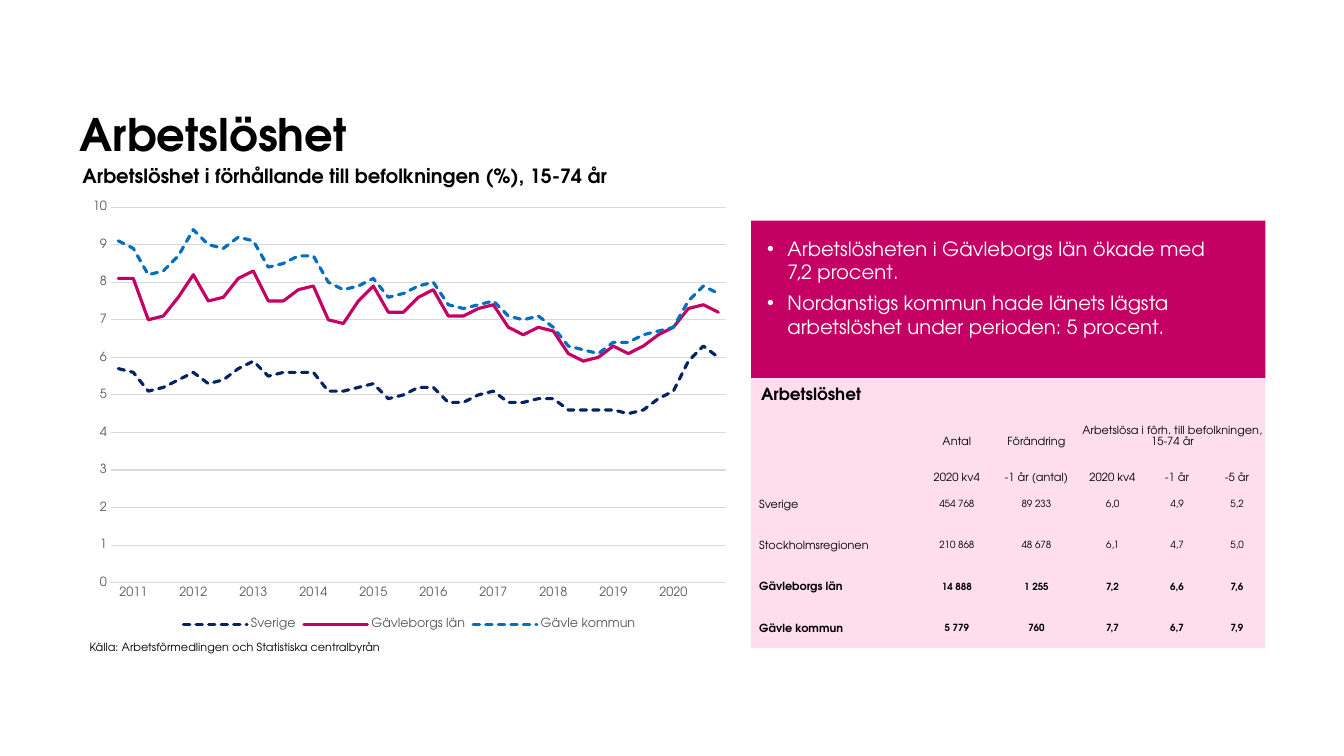
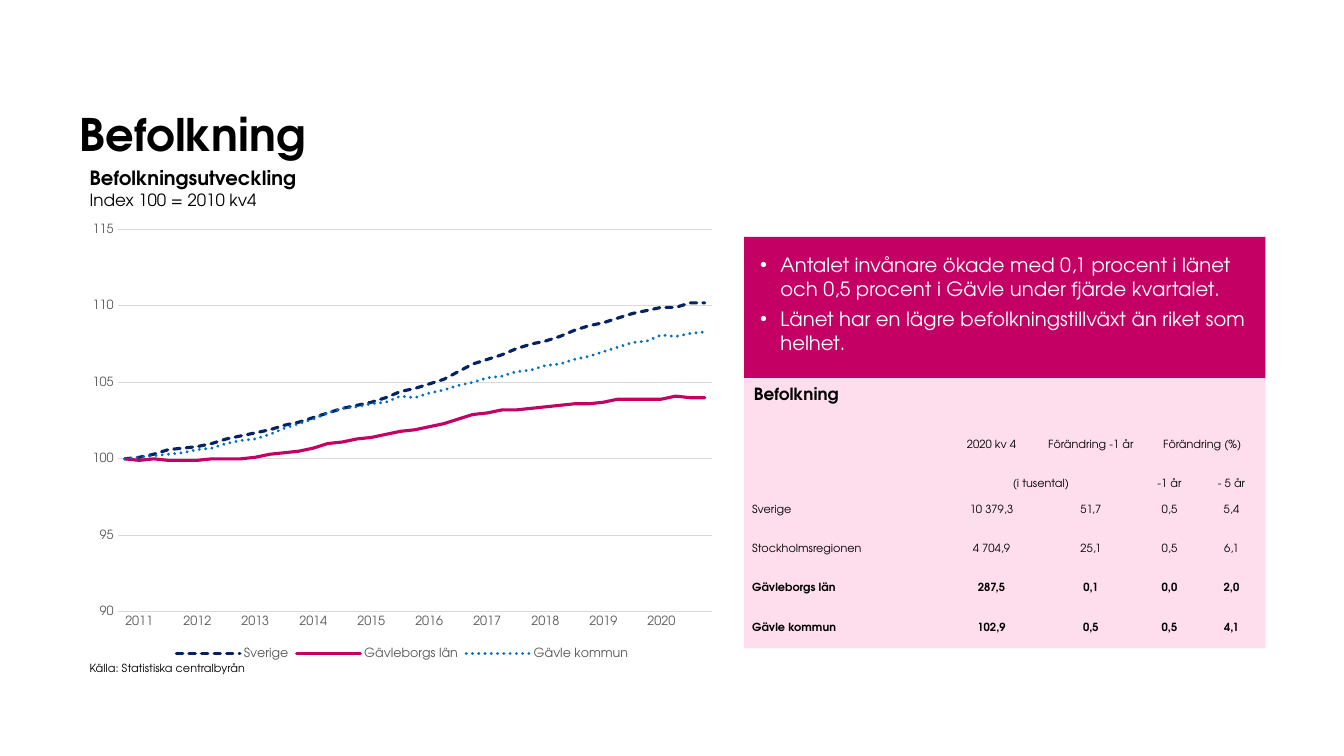
from lxml.etree import SubElement as Sub
from pptx import Presentation
from pptx.chart.data import CategoryChartData as Data
from pptx.dml.color import RGBColor as RGB
from pptx.enum.chart import XL_CHART_TYPE as Kind, XL_LEGEND_POSITION as Place
from pptx.enum.chart import XL_MARKER_STYLE as Mark, XL_TICK_MARK as Tick
from pptx.enum.dml import MSO_LINE as Dash
from pptx.enum.shapes import MSO_SHAPE as Form
from pptx.enum.text import MSO_ANCHOR as Anchor, PP_ALIGN as Align
from pptx.oxml.ns import qn
from pptx.util import Inches, Pt

# Shared look
FONT = "TeX Gyre Adventor"
BLACK, WHITE, GREY, RULE = "000000", "FFFFFF", "595959", "D9D9D9"
PINK, PALE, NAVY, BLUE = "C40064", "FEDEED", "052364", "006EBF"
LEFT, RIGHT, SPLIT, FLOOR = 0.79, 12.55, 3.75, 6.43
NO_GRID = "{2D5ABB26-0587-4C30-8999-92F81FD0307C}"
YEARS = [str(2011 + i // 4) if i % 4 == 1 else "" for i in range(41)]
AREAS = ["Sverige", "Gävleborgs län", "Gävle kommun"]

# Slide content
JOBS = {
    "title": "Arbetslöshet",
    "head": [("Arbetslöshet i förhållande till befolkningen (%), 15-74 år", 14, True)],
    "head_at": (0.72, 1.58, 5.7, 0.34),
    "source": "Källa: Arbetsförmedlingen och Statistiska centralbyrån",
    "source_at": (LEFT, 6.3, 3.13, 0.24),
    "panel": (7.45, 2.19),
    "points": ["Arbetslösheten i Gävleborgs län ökade med\n7,2 procent.",
               "Nordanstigs kommun hade länets lägsta arbetslöshet "
               "under perioden: 5 procent."],
    "cols": [1.67, 0.74, 0.84, 0.67, 0.61, 0.58],
    "rows": [0.36] * 2 + [0.41] * 4,
    "spans": [(0, 3, 5)],
    "size": 7,
    "cells": [
        ["", "Antal", "Förändring", "Arbetslösa i förh. till befolkningen, 15-74 år", "", ""],
        ["", "2020 kv4", "-1 år (antal)", "2020 kv4", "-1 år", "-5 år"],
        ["Sverige", "454 768", "89 233", "6,0", "4,9", "5,2"],
        ["Stockholmsregionen", "210 868", "48 678", "6,1", "4,7", "5,0"],
        ["Gävleborgs län", "14 888", "1 255", "7,2", "6,6", "7,6"],
        ["Gävle kommun", "5 779", "760", "7,7", "6,7", "7,9"]],
    "chart_at": (LEFT, 1.91, 6.54, 4.38),
    "scale": (0, 10, 1),
    "dashes": [Dash.SQUARE_DOT, None, Dash.SQUARE_DOT],
    "series": [
        [5.7, 5.6, 5.1, 5.2, 5.4, 5.6, 5.3, 5.4, 5.7, 5.9, 5.5, 5.6, 5.6, 5.6,
         5.1, 5.1, 5.2, 5.3, 4.9, 5, 5.2, 5.2, 4.8, 4.8, 5, 5.1, 4.8, 4.8,
         4.9, 4.9, 4.6, 4.6, 4.6, 4.6, 4.5, 4.6, 4.9, 5.1, 5.9, 6.3, 6],
        [8.1, 8.1, 7, 7.1, 7.6, 8.2, 7.5, 7.6, 8.1, 8.3, 7.5, 7.5, 7.8, 7.9,
         7, 6.9, 7.5, 7.9, 7.2, 7.2, 7.6, 7.8, 7.1, 7.1, 7.3, 7.4, 6.8, 6.6,
         6.8, 6.7, 6.1, 5.9, 6, 6.3, 6.1, 6.3, 6.6, 6.8, 7.3, 7.4, 7.2],
        [9.1, 8.9, 8.2, 8.3, 8.7, 9.4, 9, 8.9, 9.2, 9.1, 8.4, 8.5, 8.7, 8.7,
         8, 7.8, 7.9, 8.1, 7.6, 7.7, 7.9, 8, 7.4, 7.3, 7.4, 7.5, 7.1, 7,
         7.1, 6.8, 6.3, 6.2, 6.1, 6.4, 6.4, 6.6, 6.7, 6.8, 7.5, 7.9, 7.7]],
}
FOLK = {
    "title": "Befolkning",
    "head": [("Befolkningsutveckling\n", 14, True), ("Index 100 = 2010 kv4", 12, False)],
    "head_at": (LEFT, 1.6, 3.98, 0.54),
    "source": "Källa: Statistiska centralbyrån",
    "source_at": (LEFT, 6.51, 1.78, 0.24),
    "panel": (7.38, 2.35),
    "points": ["Antalet invånare ökade med 0,1 procent i länet och 0,5 procent "
               "i Gävle under fjärde kvartalet.",
               "Länet har en lägre befolkningstillväxt än riket som helhet."],
    "cols": [1.96, 0.99, 0.98, 0.58, 0.65],
    "rows": [0.39] * 6,
    "spans": [(0, 3, 4), (1, 1, 2)],
    "size": 8,
    "cells": [
        ["", "2020 kv 4", "Förändring -1 år", "Förändring (%)", ""],
        ["", "(i tusental)", "", "-1 år", "- 5 år"],
        ["Sverige", "10 379,3", "51,7", "0,5", "5,4"],
        ["Stockholmsregionen", "4 704,9", "25,1", "0,5", "6,1"],
        ["Gävleborgs län", "287,5", "0,1", "0,0", "2,0"],
        ["Gävle kommun", "102,9", "0,5", "0,5", "4,1"]],
    "chart_at": (LEFT, 2.13, 6.4, 4.45),
    "scale": (90, 115, 5),
    "dashes": [Dash.SQUARE_DOT, None, Dash.ROUND_DOT],
    "series": [
        [100, 100.1, 100.3, 100.6, 100.7, 100.8, 101, 101.3, 101.5, 101.7, 101.9,
         102.2, 102.4, 102.7, 103, 103.3, 103.5, 103.7, 104, 104.4, 104.6,
         104.9, 105.2, 105.7, 106.2, 106.5, 106.8, 107.2, 107.5, 107.7, 108,
         108.4, 108.7, 108.9, 109.2, 109.5, 109.7, 109.9, 109.9, 110.2, 110.2],
        [100, 99.9, 100, 99.9, 99.9, 99.9, 100, 100, 100, 100.1, 100.3,
         100.4, 100.5, 100.7, 101, 101.1, 101.3, 101.4, 101.6, 101.8, 101.9,
         102.1, 102.3, 102.6, 102.9, 103, 103.2, 103.2, 103.3, 103.4, 103.5,
         103.6, 103.6, 103.7, 103.9, 103.9, 103.9, 103.9, 104.1, 104, 104],
        [100, 100.1, 100.2, 100.3, 100.4, 100.6, 100.7, 101, 101.2, 101.3, 101.6,
         102, 102.3, 102.6, 103, 103.3, 103.4, 103.6, 103.7, 104.1, 104,
         104.3, 104.5, 104.8, 105, 105.3, 105.4, 105.7, 105.8, 106.1, 106.2,
         106.5, 106.7, 107, 107.3, 107.6, 107.7, 108.1, 108, 108.2, 108.3]],
}


def color(code):
    return RGB.from_string(code)


def style(font, size, code=BLACK, bold=False):
    font.name, font.size, font.bold = FONT, Pt(size), bold
    font.color.rgb = color(code)


def write(para, text, size, code=BLACK, bold=False):
    for i, line in enumerate(text.split("\n")):
        if i:
            para.add_line_break()
        if line:
            run = para.add_run()
            run.text = line
            style(run.font, size, code, bold)


def pad(item, size):
    item.margin_left = item.margin_right = Inches(size)
    item.margin_top = item.margin_bottom = Inches(size)


def label(slide, at, runs, wrap=True):
    frame = slide.shapes.add_textbox(*map(Inches, at)).text_frame
    frame.word_wrap = wrap
    for run in runs:
        write(frame.paragraphs[0], *run)
    return frame


def title(slide, text):
    frame = label(slide, (LEFT, 0.37, 9.22, 1.22), [(text, 32, BLACK, True)])
    frame.vertical_anchor = Anchor.BOTTOM
    pad(frame, 0)


def block(slide, left, top, base, code):
    box = slide.shapes.add_shape(Form.RECTANGLE, Inches(left), Inches(top),
                                 Inches(RIGHT - left), Inches(base - top))
    box.shadow.inherit = False
    box.fill.solid()
    box.fill.fore_color.rgb = color(code)
    box.line.fill.background()
    return box


def bullets(box, points):
    frame = box.text_frame
    frame.word_wrap, frame.vertical_anchor = True, Anchor.TOP
    pad(frame, 0.16)
    for i, text in enumerate(points):
        para = frame.add_paragraph() if i else frame.paragraphs[0]
        para.alignment = Align.LEFT
        para.space_before = Pt(5 if i else 0)
        props = para._p.get_or_add_pPr()
        props.set("marL", str(Inches(0.2)))
        props.set("indent", str(-Inches(0.2)))
        Sub(props, qn("a:buFont")).set("typeface", "Arial")
        Sub(props, qn("a:buChar")).set("char", "•")
        write(para, text, 14, WHITE)


def grid(slide, left, info):
    cols, rows = info["cols"], info["rows"]
    area = (left, 4.08, sum(cols), sum(rows))
    table = slide.shapes.add_table(len(rows), len(cols), *map(Inches, area)).table
    table.first_row = table.horz_banding = False
    table._tbl.tblPr.find(qn("a:tableStyleId")).text = NO_GRID
    for col, width in zip(table.columns, cols):
        col.width = Inches(width)
    for r, texts in enumerate(info["cells"]):
        table.rows[r].height = Inches(rows[r])
        for c, text in enumerate(texts):
            cell = table.cell(r, c)
            cell.fill.background()
            pad(cell, 0.01)
            cell.margin_bottom = 0
            cell.vertical_anchor = Anchor.BOTTOM if r < 2 else Anchor.MIDDLE
            para = cell.text_frame.paragraphs[0]
            if c:
                para.alignment = Align.CENTER
            else:
                cell.margin_left = Inches(0.08)
            size = info["size"] if r > 1 and c else 8
            write(para, text, size, BLACK, r > 3)
    for r, start, end in info["spans"]:
        table.cell(r, start).merge(table.cell(r, end))


def stroke(line, code, width):
    line.color.rgb = color(code)
    line.width = Pt(width)


def graph(slide, info):
    data = Data(number_format="0.0")
    data.categories = YEARS
    for name, vals in zip(AREAS, info["series"]):
        data.add_series(name, vals)
    chart = slide.shapes.add_chart(Kind.LINE, *map(Inches, info["chart_at"]), data).chart
    chart.has_title = False
    style(chart.font, 10)
    chart.has_legend = True
    chart.legend.position = Place.BOTTOM
    chart.legend.include_in_layout = False
    style(chart.legend.font, 9, GREY)

    # Axes
    years, scale = chart.category_axis, chart.value_axis
    for axis in (years, scale):
        axis.major_tick_mark = axis.minor_tick_mark = Tick.NONE
        style(axis.tick_labels.font, 9, GREY)
    stroke(years.format.line, RULE, 0.75)
    skip = years._element.makeelement(qn("c:tickLblSkip"), {"val": "1"})
    years._element.find(qn("c:noMultiLvlLbl")).addprevious(skip)
    scale.format.line.fill.background()
    scale.has_major_gridlines = True
    stroke(scale.major_gridlines.format.line, RULE, 0.75)
    scale.minimum_scale, scale.maximum_scale, scale.major_unit = info["scale"]
    scale.tick_labels.number_format = "0"
    scale.tick_labels.number_format_is_linked = False

    # Lines
    plot = chart.plots[0]
    plot.vary_by_categories = False
    for line, code, dash in zip(plot.series, (NAVY, PINK, BLUE), info["dashes"]):
        line.smooth = False
        line.marker.style = Mark.NONE
        stroke(line.format.line, code, 2.25)
        if dash:
            line.format.line.dash_style = dash
        line._element.xpath("c:spPr/a:ln")[0].set("cap", "rnd")


def build(deck, info):
    slide = deck.slides.add_slide(deck.slide_layouts[6])
    left, top = info["panel"]
    title(slide, info["title"])
    label(slide, info["source_at"], [(info["source"], 8)], False)
    block(slide, left, SPLIT, FLOOR, PALE)
    bullets(block(slide, left, top, SPLIT, PINK), info["points"])
    label(slide, (left, 3.76, 1.2, 0.3), [(info["title"], 12, BLACK, True)], False)
    label(slide, info["head_at"], [(t, s, BLACK, b) for t, s, b in info["head"]])
    grid(slide, left, info)
    graph(slide, info)


def main():
    deck = Presentation()
    deck.slide_width, deck.slide_height = Inches(13.33), Inches(7.5)
    for info in (JOBS, FOLK):
        build(deck, info)
    deck.save("out.pptx")


if __name__ == "__main__":
    main()
